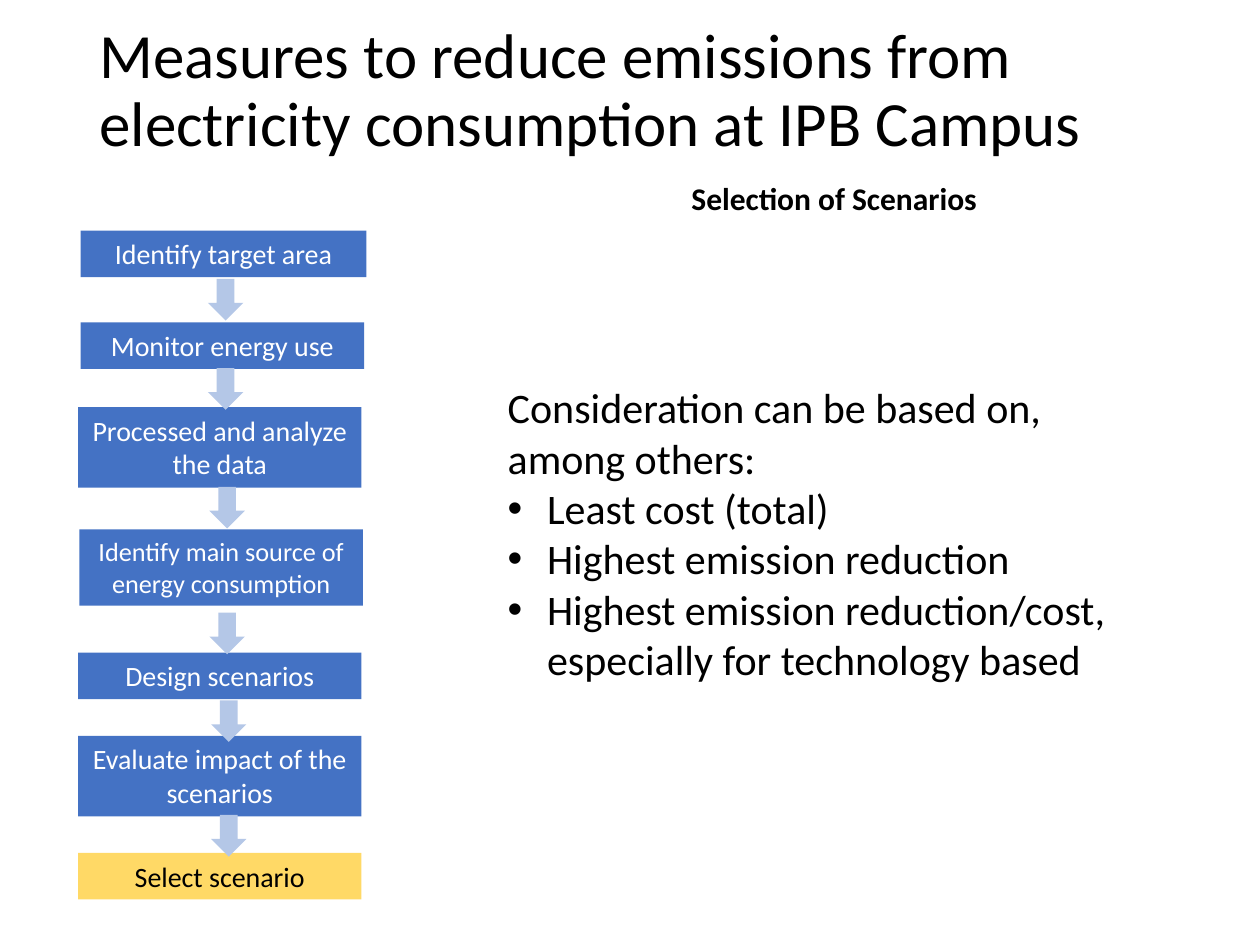
"""Build the slide on selecting scenarios to reduce campus emissions."""
import pptx
import pptx.dml.color
import pptx.enum.shapes
import pptx.enum.text
import pptx.oxml
import pptx.util
from lxml import etree

Pt = pptx.util.Pt
SHAPE = pptx.enum.shapes.MSO_SHAPE
ALIGN = pptx.enum.text.PP_ALIGN
ANCHOR = pptx.enum.text.MSO_ANCHOR


def color(value):
    return pptx.dml.color.RGBColor.from_string(value)


def write(para, text, size, ink="000000", bold=False):
    span = para.add_run()
    span.text = text
    span.font.name = "Calibri"
    span.font.size = Pt(size)
    span.font.bold = bold
    span.font.color.rgb = color(ink)


deck = pptx.Presentation()
deck.slide_width, deck.slide_height = Pt(720), Pt(540)
page = deck.slides.add_slide(deck.slide_layouts[6])

BLUE, YELLOW, WHITE, BLACK = "4472C4", "FFD966", "FFFFFF", "000000"
steps = [
    ("Identify target area", 46.1, 131.8, 163.4, 26.6, 16, BLUE, WHITE),
    ("Monitor energy use", 46.1, 184.3, 162, 26.6, 16, BLUE, WHITE),
    ("Processed and analyze the data", 44.6, 232.6, 162, 46.1, 16, BLUE, WHITE),
    ("Identify main source of energy consumption", 45.4, 302.6, 162, 43.6, 15, BLUE, WHITE),
    ("Design scenarios", 44.6, 373, 162, 26.6, 16, BLUE, WHITE),
    ("Evaluate impact of the scenarios", 44.6, 420.5, 162, 46.1, 16, BLUE, WHITE),
    ("Select scenario", 44.6, 487.4, 162, 26.6, 16, YELLOW, BLACK),
]
for text, left, top, width, height, size, fill, ink in steps:
    box = page.shapes.add_shape(SHAPE.RECTANGLE, Pt(left), Pt(top), Pt(width), Pt(height))
    box.shadow.inherit = False
    box.fill.solid()
    box.fill.fore_color.rgb = color(fill)
    box.line.fill.background()
    box.text_frame.word_wrap = True
    box.text_frame.vertical_anchor = ANCHOR.TOP
    para = box.text_frame.paragraphs[0]
    para.alignment = ALIGN.CENTER
    write(para, text, size, ink)

arrows = [(118.8, 159.4), (118.8, 210.4), (119.7, 278.2),
          (119.7, 350.1), (120.6, 400.2), (120.6, 465.7)]
for left, top in arrows:
    arrow = page.shapes.add_shape(SHAPE.DOWN_ARROW, Pt(left), Pt(top), Pt(20.2), Pt(23.8))
    arrow.shadow.inherit = False
    arrow.fill.solid()
    arrow.fill.fore_color.rgb = color("B4C7E7")
    arrow.line.fill.background()

title = page.shapes.add_textbox(Pt(49.7), Pt(7.2), Pt(636.5), Pt(91.4))
title.text_frame.word_wrap = True
title.text_frame.vertical_anchor = ANCHOR.MIDDLE
para = title.text_frame.paragraphs[0]
para.line_spacing = 0.9
write(para, "Measures to reduce emissions from electricity consumption at IPB Campus", 36)

heading = page.shapes.add_textbox(Pt(388), Pt(98.6), Pt(179.3), Pt(28.8))
heading.text_frame.word_wrap = False
write(heading.text_frame.paragraphs[0], "Selection of Scenarios", 18, bold=True)

criteria = page.shapes.add_textbox(Pt(283), Pt(214.6), Pt(359.3), Pt(181.4))
criteria.text_frame.word_wrap = True
write(criteria.text_frame.paragraphs[0], "Consideration can be based on, among others:", 24)
for text in ("Least cost (total)", "Highest emission reduction",
             "Highest emission reduction/cost, especially for technology based"):
    para = criteria.text_frame.add_paragraph()
    write(para, text, 24)
    props = para._p.get_or_add_pPr()
    props.set("marL", str(Pt(22.5)))
    props.set("indent", str(Pt(-22.5)))
    etree.SubElement(props, pptx.oxml.ns.qn("a:buFont")).set("typeface", "Arial")
    etree.SubElement(props, pptx.oxml.ns.qn("a:buChar")).set("char", "•")

deck.save("out.pptx")
